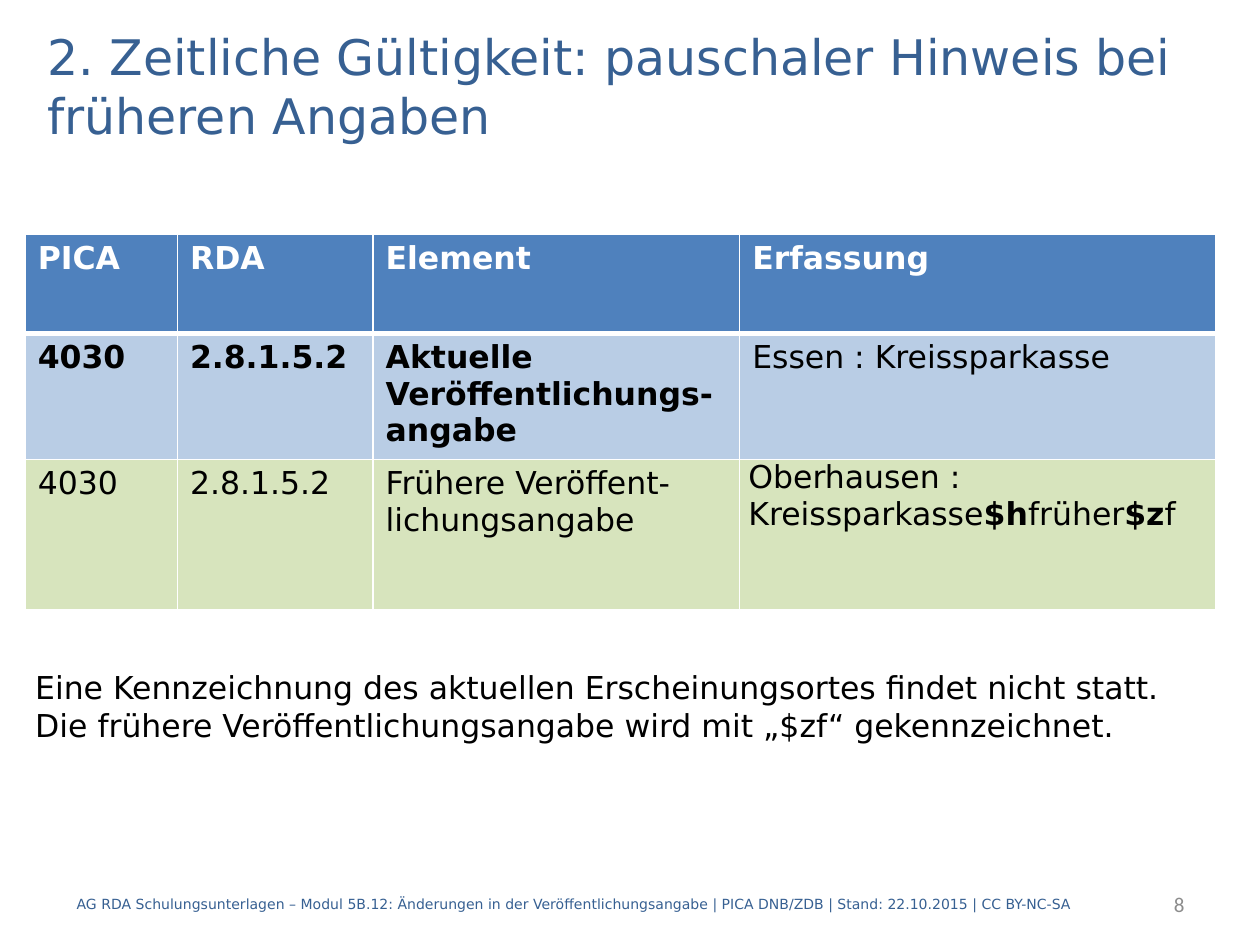
from lxml.etree import SubElement
from pptx import Presentation
from pptx.dml.color import RGBColor
from pptx.enum.text import MSO_ANCHOR, PP_ALIGN
from pptx.oxml.ns import qn
from pptx.util import Pt

TITLE_BLUE = RGBColor(0x37, 0x60, 0x92)
HEADER_BLUE = RGBColor(0x4F, 0x81, 0xBD)
CURRENT_BLUE = RGBColor(0xB9, 0xCD, 0xE5)
FORMER_GREEN = RGBColor(0xD7, 0xE4, 0xBD)
GREY = RGBColor(0x8C, 0x8C, 0x8C)
BLACK = RGBColor(0, 0, 0)
WHITE = RGBColor(0xFF, 0xFF, 0xFF)
FONT = "DejaVu Sans"

presentation = Presentation()
presentation.slide_width = Pt(720)
presentation.slide_height = Pt(540)
slide = presentation.slides.add_slide(presentation.slide_layouts[6])


def add_run(paragraph, text, size, color, bold=False, font=FONT):
    run = paragraph.add_run()
    run.text = text
    run.font.size = Pt(size)
    run.font.name = font
    run.font.bold = bold
    run.font.color.rgb = color


def add_text(text, left, top, width, height, size, color,
             anchor=MSO_ANCHOR.MIDDLE, align=PP_ALIGN.LEFT, font=FONT):
    box = slide.shapes.add_textbox(Pt(left), Pt(top), Pt(width), Pt(height))
    frame = box.text_frame
    frame.word_wrap = True
    frame.vertical_anchor = anchor
    paragraph = frame.paragraphs[0]
    paragraph.alignment = align
    add_run(paragraph, text, size, color, font=font)


# Title
add_text("2. Zeitliche Gültigkeit: pauschaler Hinweis bei früheren Angaben",
         20, 14.4, 680.4, 68.4, 28, TITLE_BLUE)

# Footer and slide number
add_text("AG RDA Schulungsunterlagen – Modul 5B.12: Änderungen in der "
         "Veröffentlichungsangabe | PICA DNB/ZDB | Stand: 22.10.2015 | CC BY-NC-SA",
         36.7, 502, 601, 28.8, 8, TITLE_BLUE)
add_text("8", 569.5, 502, 114.5, 28.8, 12, GREY, align=PP_ALIGN.RIGHT, font="Calibri")

# Table contents: each cell is a list of paragraphs, each paragraph a list of (text, bold)
rows = [
    (56.5, HEADER_BLUE, WHITE, 3, [
        [[("PICA", True)]], [[("RDA", True)]],
        [[("Element", True)]], [[("Erfassung", True)]]]),
    (70, CURRENT_BLUE, BLACK, 1, [
        [[("4030", True)]], [[("2.8.1.5.2", True)]],
        [[("Aktuelle Veröffentlichungs-angabe", True)]],
        [[("Essen : Kreissparkasse", False)]]]),
    (86, FORMER_GREEN, BLACK, 1, [
        [[("4030", False)]], [[("2.8.1.5.2", False)]],
        [[("Frühere Veröffent-", False)], [("lichungsangabe", False)]],
        [[("Oberhausen : Kreissparkasse", False), ("$h", True),
          ("früher", False), ("$z", True), ("f", False)]]]),
]
column_widths = [87, 111.8, 209.5, 272.1]

table = slide.shapes.add_table(len(rows), len(column_widths), Pt(14.4), Pt(134),
                               Pt(sum(column_widths)),
                               Pt(sum(row[0] for row in rows))).table
for column, width in zip(table.columns, column_widths):
    column.width = Pt(width)

for row_index, (height, fill, color, bottom_width, contents) in enumerate(rows):
    table.rows[row_index].height = Pt(height)
    top_width = rows[row_index - 1][3] if row_index else 1
    for column_index, paragraphs in enumerate(contents):
        cell = table.cell(row_index, column_index)
        for index, runs in enumerate(paragraphs):
            frame = cell.text_frame
            paragraph = frame.add_paragraph() if index else frame.paragraphs[0]
            for text, bold in runs:
                add_run(paragraph, text, 18, color, bold)

        # White cell borders, which must precede the fill in the cell properties
        properties = cell._tc.get_or_add_tcPr()
        borders = (("a:lnL", 1), ("a:lnR", 1), ("a:lnT", top_width), ("a:lnB", bottom_width))
        for tag, width in borders:
            line = SubElement(properties, qn(tag), w=str(int(Pt(width))))
            line_fill = SubElement(line, qn("a:solidFill"))
            SubElement(line_fill, qn("a:srgbClr"), val=str(WHITE))
        cell.fill.solid()
        cell.fill.fore_color.rgb = fill

# The last cell has tighter margins
last_cell = table.cell(2, 3)
last_cell.margin_left = last_cell.margin_right = Pt(5)
last_cell.margin_top = last_cell.margin_bottom = Pt(0)

# Remark below the table
add_text("Eine Kennzeichnung des aktuellen Erscheinungsortes findet nicht statt. "
         "Die frühere Veröffentlichungsangabe wird mit „$zf“ gekennzeichnet.",
         13, 378, 686, 72.7, 18, BLACK, anchor=MSO_ANCHOR.TOP)

presentation.save("out.pptx")
